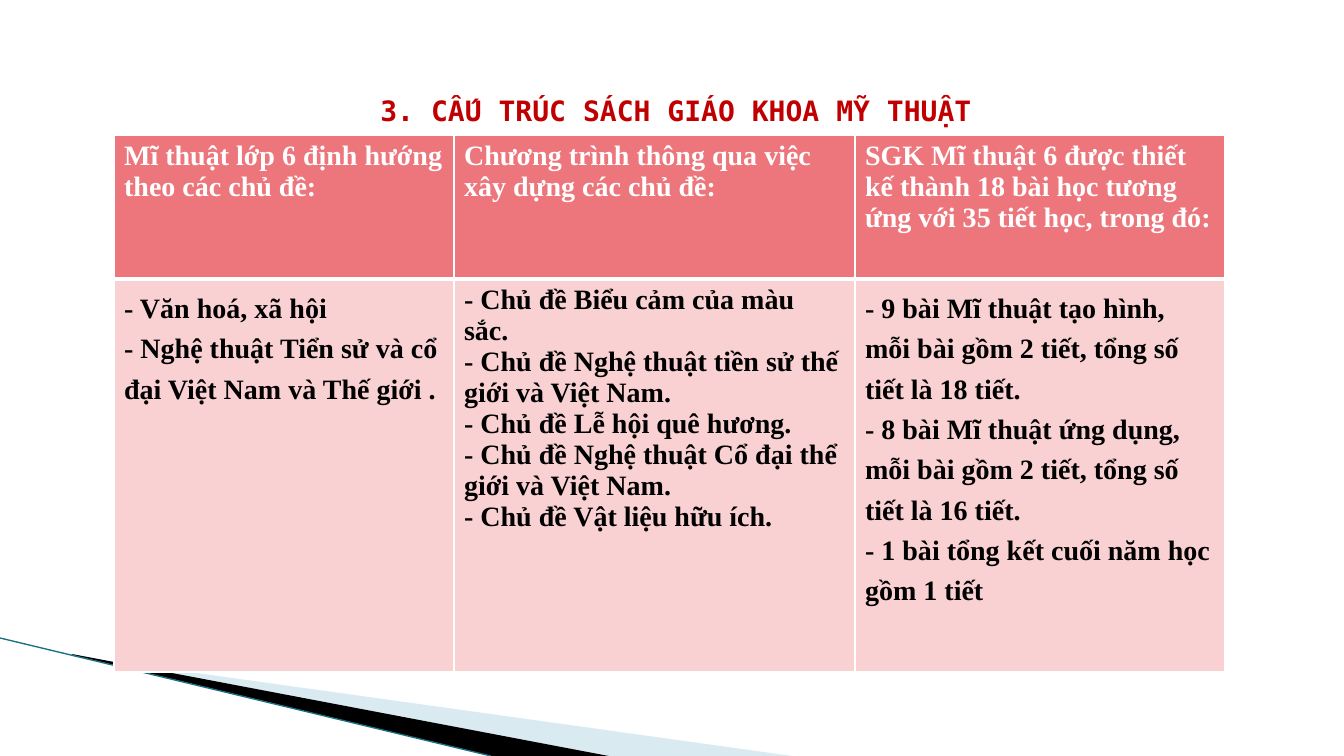
from lxml import etree
from pptx import Presentation
from pptx import util as u
from pptx.dml.color import RGBColor
from pptx.enum import shapes, text
from pptx.oxml import ns

TITLE = "3. CẤU TRÚC SÁCH GIÁO KHOA MỸ THUẬT"
COLUMNS = [
    {"width": 340, "spacing": 1.3,
     "head": "Mĩ thuật lớp 6 định hướng theo các chủ đề:",
     "body": ["- Văn hoá, xã hội",
              "- Nghệ thuật Tiển sử và cổ đại Việt Nam và Thế giới ."]},
    {"width": 401, "spacing": 1.0,
     "head": "Chương trình thông qua việc xây dựng các chủ đề:",
     "body": ["- Chủ đề Biểu cảm của màu sắc.",
              "- Chủ đề Nghệ thuật tiền sử thế giới và Việt Nam.",
              "- Chủ đề Lễ hội quê hương.",
              "- Chủ đề Nghệ thuật Cổ đại thể giới và Việt Nam.",
              "- Chủ đề Vật liệu hữu ích."]},
    {"width": 370, "spacing": 1.3,
     "head": "SGK Mĩ thuật 6 được thiết kế thành 18 bài học tương ứng với 35 tiết học, trong đó:",
     "body": ["- 9 bài Mĩ thuật tạo hình, mỗi bài gồm 2 tiết, tổng số tiết là 18 tiết.",
              "- 8 bài Mĩ thuật ứng dụng, mỗi bài gồm 2 tiết, tổng số tiết là 16 tiết.",
              "- 1 bài tổng kết cuối năm học gồm 1 tiết"]},
]
COLORS = {"title": "C00000", "head": "EC767C", "body": "F9D1D3", "white": "FFFFFF",
          "black": "000000", "pale": "A0CBDC", "teal": "1B6F82"}
TITLE_FONT, TABLE_FONT = "DejaVu Sans Mono", "Times New Roman"
TITLE_BOX = (340, 78, 672, 54)
TABLE_LEFT, TABLE_TOP, ROW_HEIGHTS = 114, 135, (144, 393)
WEDGES = [
    ("pale", 40, [(74, 656), (799, 757), (613, 757), (74, 655)]),
    ("black", 100, [(72, 654), (614, 757), (500, 758), (73, 655)]),
]
SWEEP_LINE = (0, 638, 491, 756)
EMU_PER_PX = 914400 / 100.8


def px(*lengths):
    return [u.Emu(round(length * EMU_PER_PX)) for length in lengths]


def color(name):
    return RGBColor.from_string(COLORS[name])


def style(para, font_name, color_name, spacing):
    para.line_spacing = spacing
    para.font.name = font_name
    para.font.size = u.Pt(20)
    para.font.bold = True
    para.font.color.rgb = color(color_name)


def add_wedge(slide, color_name, opacity, points):
    builder = slide.shapes.build_freeform(*points[0], scale=EMU_PER_PX)
    builder.add_line_segments(points[1:], close=True)
    wedge = builder.convert_to_shape()
    wedge.shadow.inherit = False
    wedge.fill.solid()
    wedge.fill.fore_color.rgb = color(color_name)
    wedge.line.fill.background()
    if opacity < 100:
        fill = wedge.fill.fore_color._xFill.find(ns.qn("a:srgbClr"))
        etree.SubElement(fill, ns.qn("a:alpha"), val=str(opacity * 1000))


def add_borders(cell, widths):
    """Draw white left, right, top and bottom borders, widths in points."""
    properties = cell._tc.get_or_add_tcPr()
    for place, (side, width) in enumerate(zip("LRTB", widths)):
        border = etree.Element(ns.qn(f"a:ln{side}"), w=str(u.Pt(width)))
        fill = etree.SubElement(border, ns.qn("a:solidFill"))
        etree.SubElement(fill, ns.qn("a:srgbClr"), val=COLORS["white"])
        properties.insert(place, border)


def fill_cell(cell, lines, fill, ink, spacing, borders):
    cell.fill.solid()
    cell.fill.fore_color.rgb = color(fill)
    cell.text = "\n".join(lines)
    for para in cell.text_frame.paragraphs:
        style(para, TABLE_FONT, ink, spacing)
    add_borders(cell, borders)


def add_title(slide):
    title = slide.shapes.title
    title.left, title.top, title.width, title.height = px(*TITLE_BOX)
    frame = title.text_frame
    frame.text = TITLE
    frame.word_wrap = False
    frame.auto_size = text.MSO_AUTO_SIZE.NONE
    frame.vertical_anchor = text.MSO_ANCHOR.TOP
    para = frame.paragraphs[0]
    para.alignment = text.PP_ALIGN.CENTER
    style(para, TITLE_FONT, "title", 1.3)


def add_sweep_line(slide):
    line = slide.shapes.add_connector(shapes.MSO_CONNECTOR.STRAIGHT, *px(*SWEEP_LINE))
    line.line.color.rgb = color("teal")
    line.line.width = u.Pt(0.95)
    etree.SubElement(line._element.spPr, ns.qn("a:effectLst"))


def add_topics_table(slide):
    width = sum(column["width"] for column in COLUMNS)
    frame = slide.shapes.add_table(
        len(ROW_HEIGHTS), len(COLUMNS),
        *px(TABLE_LEFT, TABLE_TOP, width, sum(ROW_HEIGHTS)))
    table = frame.table
    table.first_row = table.horz_banding = False
    for row, height in zip(table.rows, ROW_HEIGHTS):
        row.height = px(height)[0]
    for index, column in enumerate(COLUMNS):
        table.columns[index].width = px(column["width"])[0]
        fill_cell(table.cell(0, index), [column["head"]], "head", "white", 1.0, (1, 1, 1, 3))
        fill_cell(table.cell(1, index), column["body"], "body", "black",
                  column["spacing"], (1, 1, 3, 1))


def main():
    deck = Presentation()
    deck.slide_width, deck.slide_height = px(1344, 756)
    slide = deck.slides.add_slide(deck.slide_layouts[5])
    for wedge in WEDGES:
        add_wedge(slide, *wedge)
    add_sweep_line(slide)
    add_title(slide)
    add_topics_table(slide)
    deck.save("out.pptx")


if __name__ == "__main__":
    main()
